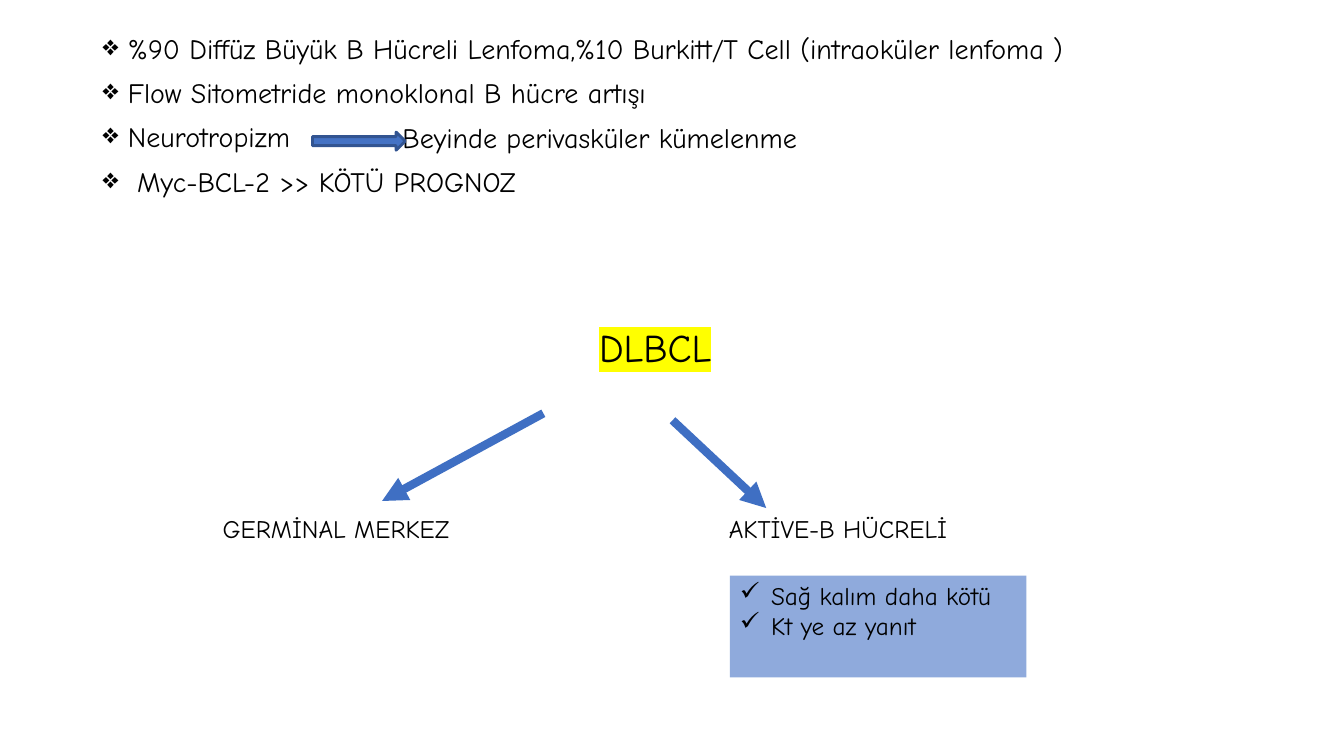
from lxml.etree import SubElement
from pptx import Presentation
from pptx.dml.color import RGBColor
from pptx.enum.shapes import MSO_CONNECTOR as Line, MSO_SHAPE as Shape
from pptx.enum.text import MSO_ANCHOR as Anchor, PP_ALIGN as Align
from pptx.oxml.ns import qn
from pptx.util import Inches, Pt

BLACK = RGBColor(0x00, 0x00, 0x00)
YELLOW = RGBColor(0xFF, 0xFF, 0x00)
BLUE = RGBColor(0x44, 0x72, 0xC4)
BRANCH_BLUE = RGBColor(0x3F, 0x6F, 0xC3)
EDGE_BLUE = RGBColor(0x32, 0x54, 0x91)
PALE_BLUE = RGBColor(0x8F, 0xAA, 0xDC)
FONT = "Comic Neue"

FINDINGS = [
    "%90 Diffüz Büyük B Hücreli Lenfoma,%10 Burkitt/T Cell (intraoküler lenfoma )",
    "Flow Sitometride monoklonal B hücre artışı",
    "Neurotropizm",
    " Myc-BCL-2 >> KÖTÜ PROGNOZ",
]
OUTCOMES = ["Sağ kalım daha kötü", "Kt ye az yanıt"]


def write(shape, *lines, size=18, align=Align.LEFT, bullet=None, indent=0,
          spacing=1.0, before=0, highlight=None):
    """Fill a shape with one formatted paragraph per line."""
    frame = shape.text_frame
    frame.word_wrap = True
    frame.vertical_anchor = Anchor.TOP
    for number, line in enumerate(lines):
        para = frame.add_paragraph() if number else frame.paragraphs[0]
        para.alignment = align
        para.line_spacing = spacing
        para.space_before = Pt(before)
        if bullet:
            properties = para._p.get_or_add_pPr()
            properties.set("marL", str(Inches(indent)))
            properties.set("indent", str(-Inches(indent)))
            SubElement(properties, qn("a:buChar"), char=bullet)
        span = para.add_run()
        span.text = line
        span.font.name = FONT
        span.font.size = Pt(size)
        span.font.color.rgb = BLACK
        if highlight is not None:
            properties = span._r.get_or_add_rPr()
            marker = SubElement(properties, qn("a:highlight"))
            SubElement(marker, qn("a:srgbClr"), val=str(highlight))
            properties.find(qn("a:solidFill")).addnext(marker)


class Board:
    """Places styled elements on a slide by percent of its width and height."""

    def __init__(self, deck):
        self.column = deck.slide_width / 100
        self.row = deck.slide_height / 100
        self.shapes = deck.slides.add_slide(deck.slide_layouts[6]).shapes

    def place(self, *lengths):
        """Turn alternating columns and rows into slide lengths."""
        return [round(length * (self.row if index % 2 else self.column))
                for index, length in enumerate(lengths)]

    def text(self, area, *lines, **style):
        """Add a text box."""
        write(self.shapes.add_textbox(*self.place(*area)), *lines, **style)

    def block(self, kind, area, fill, edge=None):
        """Add a filled preset shape."""
        shape = self.shapes.add_shape(kind, *self.place(*area))
        shape.shadow.inherit = False
        shape.fill.solid()
        shape.fill.fore_color.rgb = fill
        if edge is None:
            shape.line.fill.background()
        else:
            shape.line.color.rgb = edge
            shape.line.width = Pt(2)
        return shape

    def branch(self, start, end):
        """Add a thick arrow."""
        arrow = self.shapes.add_connector(Line.STRAIGHT, *self.place(*start, *end))
        arrow.line.color.rgb = BRANCH_BLUE
        arrow.line.width = Pt(6)
        SubElement(arrow.line._get_or_add_ln(), qn("a:tailEnd"), type="triangle")
        SubElement(arrow._element.spPr, qn("a:effectLst"))


def main():
    """Build and save the slide."""
    deck = Presentation()
    deck.slide_width, deck.slide_height = Inches(13.33), Inches(7.5)
    board = Board(deck)

    listing = {"size": 20, "spacing": 0.9, "before": 10}
    board.text((6.9, 4, 86.27, 24), *FINDINGS, bullet="❖", indent=0.25, **listing)
    board.text((29.2, 15.75, 40, 6), "Beyinde perivasküler kümelenme", **listing)
    board.block(Shape.RIGHT_ARROW, (23.25, 17.47, 6.9, 2.4), BLUE, EDGE_BLUE)

    board.text((43.2, 42.13, 11.1, 7.33), "DLBCL", size=28, align=Align.CENTER,
               highlight=YELLOW)
    board.branch((40.43, 54.67), (28.43, 66.27))
    board.branch((50.04, 55.6), (57.01, 67.2))
    board.text((15.83, 67.2, 20.63, 5.33), "GERMİNAL MERKEZ")
    board.text((53.49, 67.2, 19.8, 5.33), "AKTİVE-B HÜCRELİ")
    outcome_box = board.block(Shape.RECTANGLE, (54.31, 76.13, 22.06, 13.47), PALE_BLUE)
    write(outcome_box, *OUTCOMES, bullet="✓", indent=0.31)

    deck.save("out.pptx")


if __name__ == "__main__":
    main()
